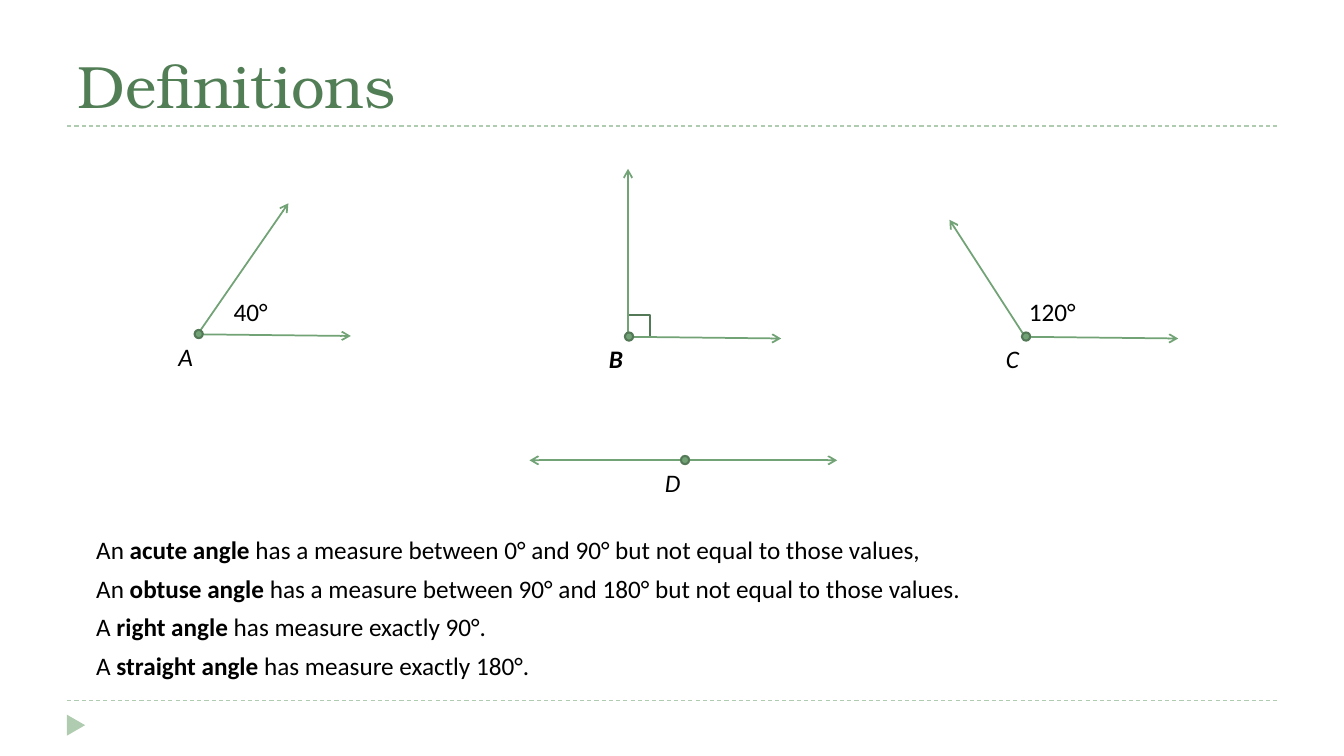
from pptx import Presentation
from pptx.dml.color import RGBColor
from pptx.enum.dml import MSO_LINE
from pptx.enum.shapes import MSO_CONNECTOR, MSO_SHAPE
from pptx.enum.text import MSO_ANCHOR, MSO_AUTO_SIZE, PP_ALIGN
from pptx.oxml.ns import qn
from pptx.util import Pt
from lxml import etree


def paint(color_format, hex_color):
    color_format.rgb = RGBColor.from_string(hex_color)


def add_line(x1, y1, x2, y2, color, width):
    c = s.shapes.add_connector(MSO_CONNECTOR.STRAIGHT, Pt(x1), Pt(y1), Pt(x2), Pt(y2))
    paint(c.line.color, color)
    c.line.width = Pt(width)
    etree.SubElement(c._element.spPr, qn("a:effectLst"))
    return c


GREEN, DARK, PALE = "72A376", "547957", "B0CCB0"

prs = Presentation()
prs.slide_width, prs.slide_height = Pt(960), Pt(540)
s = prs.slides.add_slide(prs.slide_layouts[1])

# Dashed rules and corner triangle
for y in (500.4, 90):
    add_line(48, y, 912, y, PALE, 0.75).line.dash_style = MSO_LINE.DASH
sp = s.shapes.add_shape(MSO_SHAPE.ISOSCELES_TRIANGLE, Pt(46.8), Pt(511.5), Pt(15), Pt(13))
sp.rotation = 90
sp.shadow.inherit = False
sp.fill.solid()
paint(sp.fill.fore_color, PALE)
sp.line.fill.background()

# Title
title = s.shapes.title
title.left, title.top, title.width, title.height = Pt(48), Pt(12), Pt(864), Pt(78)
tf = title.text_frame
tf.text = "Definitions"
tf.vertical_anchor = MSO_ANCHOR.BOTTOM
tf.auto_size = MSO_AUTO_SIZE.NONE
p = tf.paragraphs[0]
p.alignment = PP_ALIGN.LEFT
r = p.runs[0]
r.font.size, r.font.name = Pt(42.7), "TeX Gyre Bonum"
paint(r.font.color, "527E56")

# Right-angle mark
sp = s.shapes.add_shape(MSO_SHAPE.RECTANGLE, Pt(448.6), Pt(225), Pt(15.8), Pt(15.8))
sp.shadow.inherit = False
sp.fill.solid()
paint(sp.fill.fore_color, "FFFFFF")
paint(sp.line.color, DARK)
sp.line.width = Pt(1.5)

# Angles: name, label width, vertex, ends of the two rays relative to the vertex
angles = [
    ("A", 24.5, 141.2, 238.8, (64.8, -93.6), (109.4, 1.2)),
    ("B", 25.9, 448.6, 240.6, (0, -120), (109.4, 1.2)),
    ("C", 24.5, 732.2, 240.6, (-54, -83.6), (109.4, 1.2)),
    ("D", 26.6, 488.6, 328.8, (-110.4, 0), (109.4, 0)),
]
DOT = 5.8
labels = [("40°", 40.3, 159.8, 208.1), ("120°", 49, 727.9, 208.1)]
for name, width, x, y, *rays in angles:
    for dx, dy in rays:
        ray = add_line(x, y, x + dx, y + dy, GREEN, 1.25)
        etree.SubElement(ray.line._get_or_add_ln(), qn("a:tailEnd"), type="arrow")
    sp = s.shapes.add_shape(MSO_SHAPE.OVAL, Pt(x + 0.7 - DOT / 2), Pt(y - 0.2 - DOT / 2), Pt(DOT), Pt(DOT))
    sp.shadow.inherit = False
    sp.fill.solid()
    paint(sp.fill.fore_color, GREEN)
    paint(sp.line.color, DARK)
    sp.line.width = Pt(1.5)
    labels.append((name, width, x - 20.8, y + 1.4))

# Vertex names and measures
for text, width, x, y in labels:
    tf = s.shapes.add_textbox(Pt(x), Pt(y), Pt(width), Pt(29)).text_frame
    tf.text = text
    tf.word_wrap = False
    r = tf.paragraphs[0].runs[0]
    r.font.size, r.font.name = Pt(18), "Calibri"
    r.font.italic = text.isalpha()
    r.font.bold = text == "B"
    paint(r.font.color, "000000")

# Definitions
definitions = [
    ("An ", "acute angle", " has a measure between 0° and 90° but not equal to those values,"),
    ("An ", "obtuse angle", " has a measure between 90° and 180° but not equal to those values."),
    ("A ", "right angle", " has measure exactly 90°."),
    ("A ", "straight angle", " has measure exactly 180°."),
]
body = s.placeholders[1]
body.left, body.top, body.width, body.height = Pt(61.5), Pt(378), Pt(649.5), Pt(113)
tf = body.text_frame
tf.word_wrap = False
tf.auto_size = MSO_AUTO_SIZE.NONE
for i, parts in enumerate(definitions):
    p = tf.add_paragraph() if i else tf.paragraphs[0]
    p.space_before, p.space_after = Pt(0), Pt(6)
    pPr = p._p.get_or_add_pPr()
    pPr.set("marL", "0")
    pPr.set("indent", "0")
    etree.SubElement(pPr, qn("a:buNone"))
    for part in parts:
        r = p.add_run()
        r.text = part
        r.font.size, r.font.name = Pt(18), "Calibri"
        r.font.bold = part == parts[1]
        paint(r.font.color, "000000")

prs.save("out.pptx")
